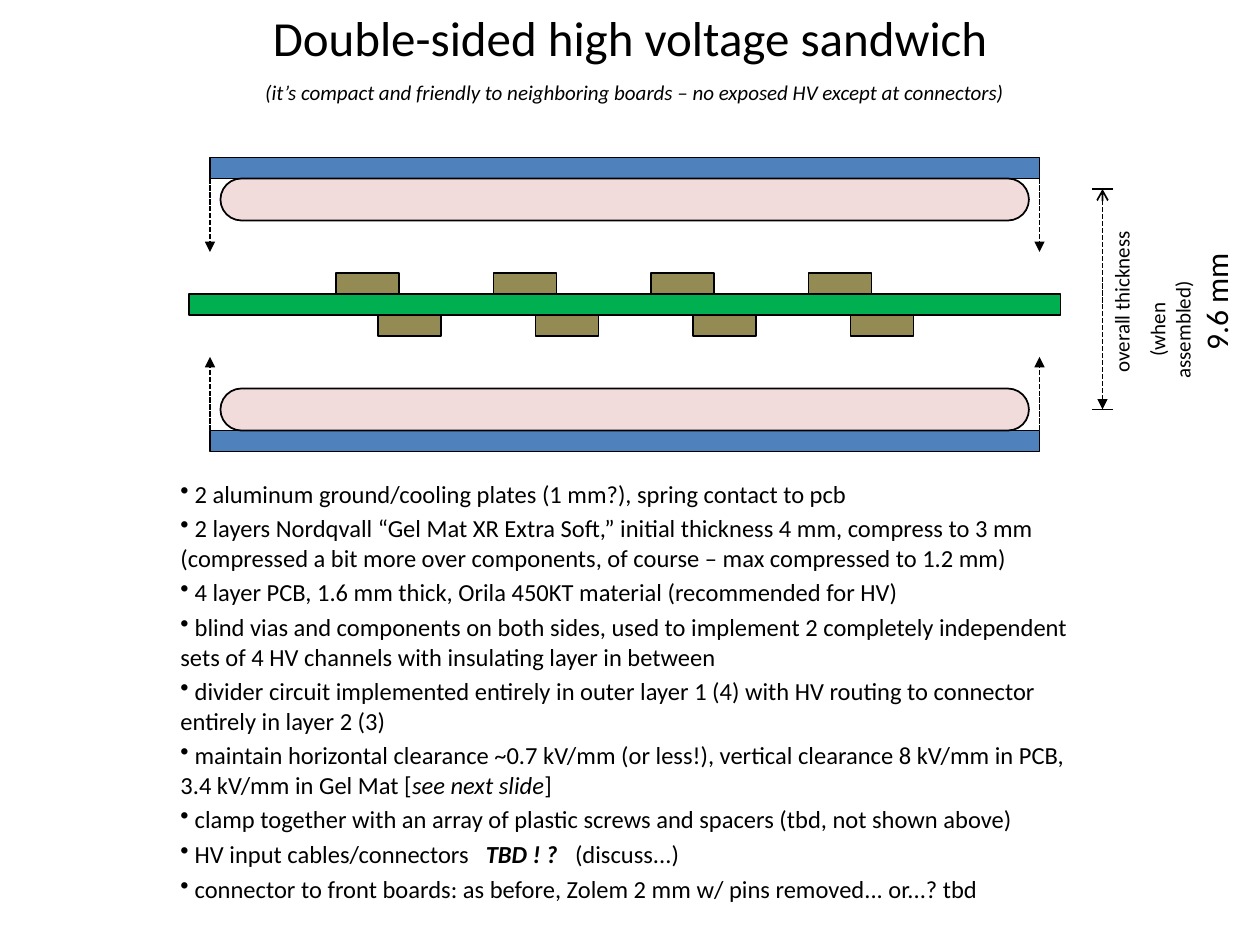
from dataclasses import dataclass

from lxml.etree import SubElement
from pptx import Presentation
from pptx.dml.color import RGBColor as RGB
from pptx.enum.dml import MSO_LINE
from pptx.enum.shapes import MSO_CONNECTOR, MSO_SHAPE as SHAPE
from pptx.enum.text import MSO_ANCHOR, MSO_AUTO_SIZE as AUTO, PP_ALIGN
from pptx.oxml.ns import qn
from pptx.util import Pt


@dataclass(frozen=True)
class Theme:
    font: str = "Calibri"
    ink: RGB = RGB(0, 0, 0)
    board: RGB = RGB(0x00, 0xB0, 0x50)
    component: RGB = RGB(0x94, 0x8A, 0x54)
    plate: RGB = RGB(0x4F, 0x81, 0xBD)
    pad: RGB = RGB(0xF2, 0xDC, 0xDB)
    title: int = 28
    value: int = 18
    body: int = 14
    small: int = 12
    stroke: int = 1


T = Theme()
LAYER = 12  # height of the board, a plate or a component

# Each bullet is a list of (text, style) runs; style may hold "b" and "i".
BULLETS = [
    [(" 2 aluminum ground/cooling plates (1 mm?), spring contact to pcb", "")],
    [(" 2 layers Nordqvall “Gel Mat XR Extra Soft,” initial thickness 4 mm, compress to 3 mm "
      "(compressed a bit more over components, of course – max compressed to 1.2 mm)", "")],
    [(" 4 layer PCB, 1.6 mm thick, Orila 450KT material (recommended for HV)", "")],
    [(" blind vias and components on both sides, used to implement 2 completely independent "
      "sets of 4 HV channels with insulating layer in between", "")],
    [(" divider circuit implemented entirely in outer layer 1 (4) with HV routing to connector "
      "entirely in layer 2 (3)", "")],
    [(" maintain horizontal clearance ~0.7 kV/mm (or less!), vertical clearance 8 kV/mm in PCB, "
      "3.4 kV/mm in Gel Mat [", ""), ("see next slide", "i"), ("]", "")],
    [(" clamp together with an array of plastic screws and spacers (tbd, not shown above)", "")],
    [(" HV input cables/connectors\t", ""), ("TBD ! ?\t", "bi"), ("(discuss...)", "")],
    [(" connector to front boards: as before, Zolem 2 mm w/ pins removed... or...? tbd", "")],
]
TAB_STOPS = (174.5, 225.5)  # columns of the connector bullet


def add_block(shapes, box, fill, kind=SHAPE.RECTANGLE):
    sp = shapes.add_shape(kind, *map(Pt, box))
    sp.shadow.inherit = False
    sp.fill.solid()
    sp.fill.fore_color.rgb = fill
    sp.line.color.rgb = T.ink
    sp.line.width = Pt(T.stroke)
    return sp


def add_line(shapes, start, end, dashed=False, **arrowheads):
    """Draw a line; headEnd and tailEnd name the arrowheads at start and end."""
    cx = shapes.add_connector(MSO_CONNECTOR.STRAIGHT, *map(Pt, (*start, *end)))
    cx.line.color.rgb = T.ink
    cx.line.width = Pt(T.stroke)
    if dashed:
        cx.line.dash_style = MSO_LINE.SQUARE_DOT
    for tag in ("headEnd", "tailEnd"):
        if tag in arrowheads:
            SubElement(cx.line._get_or_add_ln(), qn(f"a:{tag}"), type=arrowheads[tag])
    SubElement(cx._element.spPr, qn("a:effectLst"))


def add_text_box(s, box, wrap=True, auto_size=AUTO.SHAPE_TO_FIT_TEXT):
    tb = s.shapes.add_textbox(*map(Pt, box))
    tb.text_frame.word_wrap = wrap
    tb.text_frame.auto_size = auto_size
    return tb


def add_run(p, text, size, style=""):
    r = p.add_run()
    r.text = text
    r.font.name = T.font
    r.font.size = Pt(size)
    r.font.color.rgb = T.ink
    r.font.bold = "b" in style
    r.font.italic = "i" in style


def next_paragraph(tf, index):
    return tf.add_paragraph() if index else tf.paragraphs[0]


def add_title(s, box):
    tf = add_text_box(s, box, auto_size=AUTO.NONE).text_frame
    tf.vertical_anchor = MSO_ANCHOR.MIDDLE
    p = tf.paragraphs[0]
    p.alignment = PP_ALIGN.CENTER
    add_run(p, "Double-sided high voltage sandwich", T.title)


def add_subtitle(s, box):
    tf = add_text_box(s, box, wrap=False).text_frame
    add_run(tf.paragraphs[0], "(it’s compact and friendly to neighboring boards – "
            "no exposed HV except at connectors)", T.small, "i")


def add_half(s, box, first_component, flipped=False):
    """Plate, pad, components and closing arrows, stacked from plate to board."""
    x, y, w, h = box
    shapes = s.shapes.add_group_shape().shapes
    pad_h, margin, arrow = 24, 6, 42

    def level(offset):
        return y + h - offset if flipped else y + offset

    def layer_top(offset, height):
        return min(level(offset), level(offset + height))

    for i in range(4):
        add_block(shapes, (x + first_component + 90 * i, layer_top(h - LAYER, LAYER), 36, LAYER),
                  T.component)
    add_block(shapes, (x, layer_top(0, LAYER), w, LAYER), T.plate)
    pad = add_block(shapes, (x + margin, layer_top(LAYER, pad_h), w - 2 * margin, pad_h),
                    T.pad, SHAPE.ROUNDED_RECTANGLE)
    pad.adjustments[0] = 0.5
    for edge in (x, x + w):
        add_line(shapes, (edge, level(LAYER)), (edge, level(LAYER + arrow)),
                 dashed=True, tailEnd="triangle")


def add_sandwich(s, box):
    x, y, w, h = box
    half_h, overhang = (h - LAYER) / 2, 12
    board_y = y + half_h
    add_block(s.shapes, (x, board_y, w, LAYER), T.board)
    half_x, half_w = x + overhang, w - 2 * overhang
    add_half(s, (half_x, y, half_w, half_h), 72)
    add_half(s, (half_x, board_y + LAYER, half_w, half_h), 96, flipped=True)


def add_bullets(s, box):
    tf = add_text_box(s, box).text_frame
    for i, runs in enumerate(BULLETS):
        p = next_paragraph(tf, i)
        p.space_after = Pt(3)
        pPr = p._p.get_or_add_pPr()
        SubElement(pPr, qn("a:buChar"), char="•")
        if any("\t" in text for text, _ in runs):
            tabs = SubElement(pPr, qn("a:tabLst"))
            for stop in TAB_STOPS:
                SubElement(tabs, qn("a:tab"), pos=str(Pt(stop)), algn="l")
        for text, style in runs:
            add_run(p, text, T.body, style)


def add_thickness(s, box):
    """Dimension line with end ticks, and its upright label to the right."""
    x, y, w, h = box
    mid, bottom = x + w / 2, y + h
    label_w, label_h = 129, 65.5
    label_x, label_y = mid + 32.75, y + h / 2 + 1.5  # centre of the label
    tb = add_text_box(s, (label_x - label_w / 2, label_y - label_h / 2, label_w, label_h))
    tb.rotation = 270
    lines = [("overall thickness", T.small, 0, 0),
             ("(when assembled)", T.small, 6, 32),
             ("9.6 mm", T.value, 1, 0)]
    for i, (text, size, before, right_margin) in enumerate(lines):
        p = next_paragraph(tb.text_frame, i)
        p.alignment = PP_ALIGN.CENTER
        p.space_before = Pt(before)
        p._p.get_or_add_pPr().set("marR", str(Pt(right_margin)))
        add_run(p, text, size)
    add_line(s.shapes, (mid, bottom), (mid, y), dashed=True, headEnd="triangle", tailEnd="arrow")
    for tick in (bottom, y):
        add_line(s.shapes, (x, tick), (x + w, tick))


def main():
    prs = Presentation()
    prs.slide_width, prs.slide_height = Pt(720), Pt(540)
    s = prs.slides.add_slide(prs.slide_layouts[6])
    add_title(s, (0, 0, 720, 42))
    add_sandwich(s, (108, 90, 498, 168))
    add_bullets(s, (96, 270, 522, 252))
    add_subtitle(s, (144.5, 42, 437, 21.8))
    add_thickness(s, (624, 108, 12, 126))
    prs.save("out.pptx")


if __name__ == "__main__":
    main()
